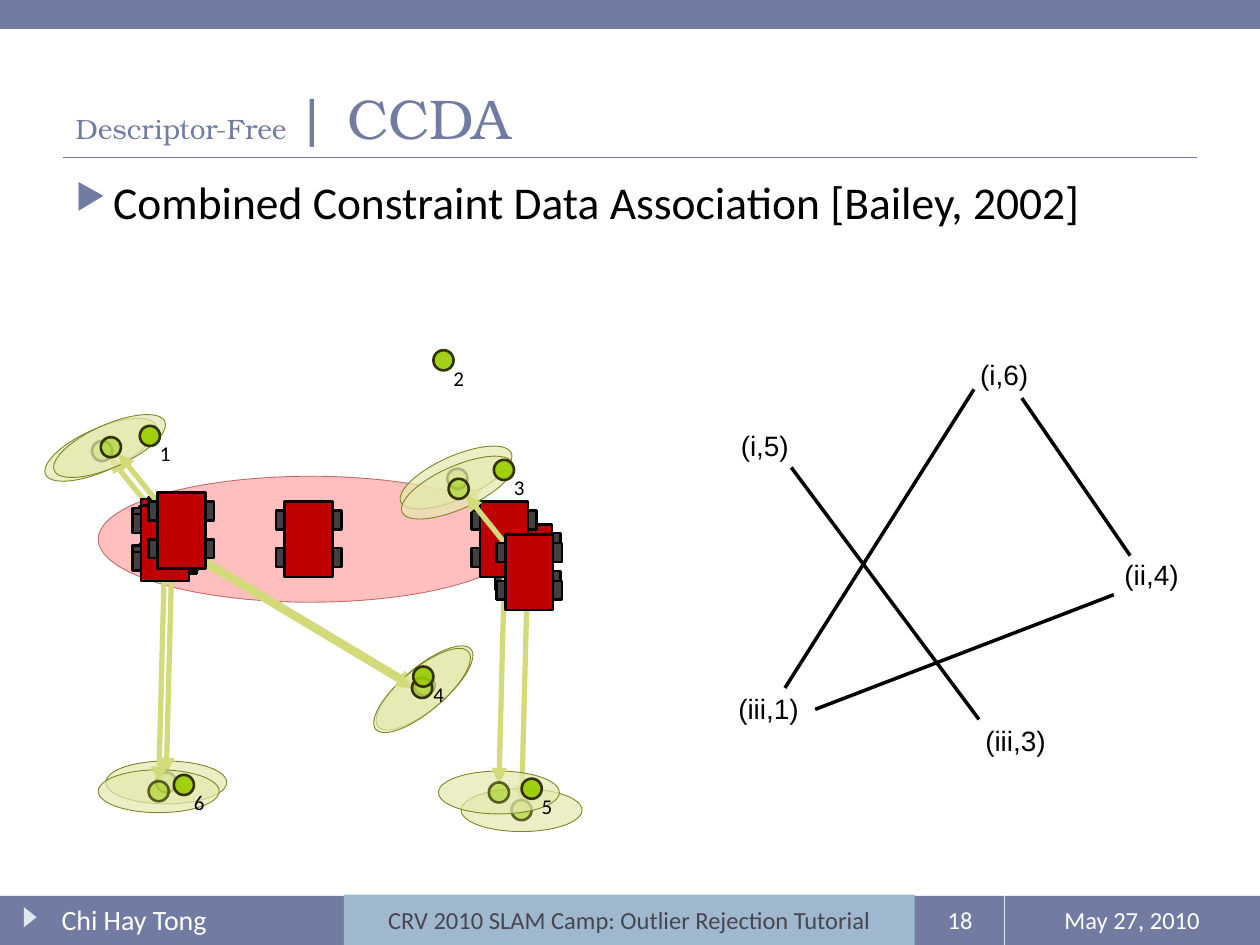
from dataclasses import dataclass
from lxml import etree
from pptx import Presentation
from pptx.dml.color import RGBColor
from pptx.enum.shapes import MSO_CONNECTOR as LINK, MSO_SHAPE as SHAPE
from pptx.enum.text import MSO_ANCHOR as ANCHOR, MSO_AUTO_SIZE as FIT, PP_ALIGN as ALIGN
from pptx.oxml.ns import qn
from pptx.util import Inches, Pt


@dataclass(frozen=True)
class Theme:
    slate: str = "727CA3"
    pale: str = "DDE9EC"
    sky: str = "9FB8CD"
    ink: str = "464653"
    white: str = "FFFFFF"
    black: str = "000000"
    red: str = "FF0000"
    maroon: str = "800000"
    chassis: str = "C00000"
    tyre: str = "404040"
    region: str = "E4E9AF"
    region_edge: str = "7D8525"
    ray: str = "D2DA7A"
    landmark: str = "99CC00"
    landmark_edge: str = "333300"
    heading: str = "TeX Gyre Bonum"
    body: str = "Calibri"
    node: str = "Arial"
    title_size: int = 32
    bullet_size: int = 26
    text_size: int = 16
    footer_size: int = 14
    label_size: int = 12


@dataclass(frozen=True)
class Sighting:
    tilt: float
    ray_start: tuple
    ray_end: tuple
    feature: tuple
    feature_turn: float = 0
    edge_alpha: int = 100


THEME = Theme()
LEVEL = Sighting(0, (0.53, -1.83), (0.48, 0.1), (0.4, 0.09), edge_alpha=75)
TILTED = Sighting(336, (1.05, 0.85), (0.55, 0.23), (0.41, 0.1), 82)
DIAGONAL = Sighting(320.1, (-1.54, -1.01), (0.4, 0.15), (0.4, 0.07))
WHEELS = ((0, 0), (0, 0.3), (0.45, 0.3), (0.45, 0))
DOT = 0.16


def apply(target, formats):
    for key, value in formats.items():
        setattr(target, key, value)


def shift(origin, offset):
    return origin[0] + offset[0], origin[1] + offset[1]


def paint(color_format, color):
    color_format.rgb = RGBColor.from_string(color)


def set_alpha(shape, route, percent):
    if percent < 100:
        color = shape._element.spPr.find("/".join(qn(tag) for tag in route))
        etree.SubElement(color, qn("a:alpha"), val=str(percent * 1000))


def add_block(shapes, kind, box, fill, edge=None, width=1.5, alpha=100, edge_alpha=100, turn=0):
    block = shapes.add_shape(kind, *map(Inches, box))
    block.shadow.inherit = False
    block.rotation = turn
    block.fill.solid()
    paint(block.fill.fore_color, fill)
    set_alpha(block, ("a:solidFill", "a:srgbClr"), alpha)
    if edge:
        block.line.width = Pt(width)
        paint(block.line.color, edge)
        set_alpha(block, ("a:ln", "a:solidFill", "a:srgbClr"), edge_alpha)
    else:
        block.line.fill.background()
    return block


def add_line(shapes, start, end, color, width, arrow=False):
    line = shapes.add_connector(LINK.STRAIGHT, *map(Inches, (*start, *end)))
    line.line.width = Pt(width)
    paint(line.line.color, color)
    properties = line._element.spPr
    if arrow:
        etree.SubElement(properties.find(qn("a:ln")), qn("a:tailEnd"), type="triangle")
    etree.SubElement(properties, qn("a:effectLst"))


def add_run(paragraph, words, size, color, font=THEME.body):
    run = paragraph.add_run()
    run.text = words
    apply(run.font, {"size": Pt(size), "name": font, "bold": False})
    paint(run.font.color, color)


def write(holder, words, size, color, font=THEME.body, align=ALIGN.LEFT, **frame_formats):
    frame = holder.text_frame
    apply(frame, {"word_wrap": True, "vertical_anchor": ANCHOR.TOP, **frame_formats})
    paragraph = frame.paragraphs[0]
    paragraph.alignment = align
    add_run(paragraph, words, size, color, font)


def add_text(shapes, box, words, size, color, **formats):
    write(shapes.add_textbox(*map(Inches, box)), words, size, color, **formats)


def add_sighting(shapes, origin, sighting):
    add_block(shapes, SHAPE.OVAL, (*origin, 0.96, 0.34), THEME.region, THEME.region_edge,
              width=0.5, alpha=70, turn=sighting.tilt)
    add_line(shapes, shift(origin, sighting.ray_start), shift(origin, sighting.ray_end),
             THEME.ray, 3, arrow=True)
    add_block(shapes, SHAPE.OVAL, (*shift(origin, sighting.feature), DOT, DOT),
              THEME.landmark, THEME.landmark_edge, alpha=50,
              edge_alpha=sighting.edge_alpha, turn=sighting.feature_turn)


def add_robot(shapes, origin, wheels=WHEELS):
    add_block(shapes, SHAPE.RECTANGLE, (*origin, 0.6, 0.38), THEME.chassis, THEME.black, turn=270)
    for wheel in wheels:
        add_block(shapes, SHAPE.RECTANGLE, (*shift(origin, wheel), 0.15, 0.07),
                  THEME.tyre, THEME.black, turn=270)


def add_landmark(shapes, origin, number):
    add_block(shapes, SHAPE.OVAL, (*origin, DOT, DOT), THEME.landmark,
              THEME.landmark_edge, alpha=90)
    add_text(shapes, (*shift(origin, (0.06, 0.07)), 0.29, 0.3), number, THEME.label_size,
             THEME.black, word_wrap=False, auto_size=FIT.SHAPE_TO_FIT_TEXT)


def add_frame(shapes):
    add_block(shapes, SHAPE.RECTANGLE, (0, 7.11, 10, 0.39), THEME.slate)
    add_line(shapes, (0.5, 1.25), (9.5, 1.25), THEME.slate, 0.75)
    add_block(shapes, SHAPE.ISOSCELES_TRIANGLE, (0.16, 7.23, 0.16, 0.1), THEME.pale, turn=90)
    add_block(shapes, SHAPE.RECTANGLE, (0, 0, 10, 0.23), THEME.slate)
    add_line(shapes, (7.97, 7.11), (7.97, 7.5), THEME.pale, 0.75)
    for left, width, words, size, align in (
        (7.27, 0.7, "18", THEME.footer_size, ALIGN.CENTER),
        (7.97, 2.03, "May 27, 2010", THEME.footer_size, ALIGN.CENTER),
        (0.39, 2.17, "Chi Hay Tong", THEME.text_size, ALIGN.LEFT),
    ):
        add_text(shapes, (left, 7.1, width, 0.4), words, size, THEME.white,
                 align=align, vertical_anchor=ANCHOR.MIDDLE)
    event = add_block(shapes, SHAPE.RECTANGLE, (2.73, 7.1, 4.53, 0.4), THEME.sky)
    write(event, "CRV 2010 SLAM Camp: Outlier Rejection Tutorial", THEME.footer_size,
          THEME.ink, align=ALIGN.CENTER, vertical_anchor=ANCHOR.MIDDLE)


def add_heading(shapes):
    title = shapes.title
    apply(title, {"left": Inches(0.5), "top": Inches(0.17),
                  "width": Inches(9), "height": Inches(1.08)})
    write(title, "Descriptor-Free ", THEME.text_size, THEME.slate, THEME.heading,
          vertical_anchor=ANCHOR.BOTTOM, auto_size=FIT.NONE)
    add_run(title.text_frame.paragraphs[0], "| CCDA", THEME.title_size, THEME.slate, THEME.heading)


def add_bullet(shapes, words):
    holder = shapes.add_textbox(*map(Inches, (0.5, 1.33, 9, 5.4)))
    properties = holder.text_frame.paragraphs[0]._p.get_or_add_pPr()
    properties.set("marL", str(Inches(0.3)))
    properties.set("indent", str(-Inches(0.3)))
    bullet_color = etree.SubElement(properties, qn("a:buClr"))
    etree.SubElement(bullet_color, qn("a:srgbClr"), val=THEME.slate)
    etree.SubElement(properties, qn("a:buSzPct"), val="76000")
    etree.SubElement(properties, qn("a:buChar"), char="▶")
    write(holder, words, THEME.bullet_size, THEME.black)


def add_scene(shapes):
    add_block(shapes, SHAPE.OVAL, (0.78, 3.78, 3.37, 1), THEME.red, THEME.maroon,
              width=0.5, alpha=25, edge_alpha=50)
    for parts in (
        [(add_sighting, (2.89, 5.29), DIAGONAL)],
        [(add_sighting, (0.84, 6.04), LEVEL)],
        [(add_sighting, (0.32, 3.4), TILTED)],
        [(add_robot, (1.07, 4.06))],
        [(add_sighting, (3.66, 6.26), LEVEL), (add_sighting, (3.14, 3.62), TILTED),
         (add_robot, (3.89, 4.27))],
        [(add_landmark, (3.44, 2.78), "2")],
        [(add_sighting, (0.78, 6.11), LEVEL), (add_robot, (1.01, 4.07), WHEELS[:2])],
        [(add_landmark, (1.38, 6.15), "6")],
        [(add_sighting, (2.87, 5.31), DIAGONAL), (add_robot, (1.01, 4.12), WHEELS[:3])],
        [(add_sighting, (3.48, 6.12), LEVEL),
         (add_robot, (3.7, 4.09), WHEELS[:2] + WHEELS[3:])],
        [(add_landmark, (4.14, 6.18), "5")],
        [(add_sighting, (0.39, 3.37), TILTED), (add_robot, (1.14, 4.02))],
        [(add_landmark, (1.11, 3.38), "1")],
        [(add_sighting, (3.15, 3.7), TILTED), (add_robot, (3.9, 4.35))],
        [(add_landmark, (3.92, 3.65), "3")],
        [(add_landmark, (3.28, 5.29), "4")],
        [(add_robot, (2.15, 4.09))],
    ):
        group = shapes.add_group_shape()
        for draw, origin, *details in parts:
            draw(group.shapes, origin, *details)


def add_graph(shapes):
    for left, top, width, pairing in (
        (5.68, 3.35, 0.78, "(i,5)"), (7.6, 2.79, 0.74, "(i,6)"), (8.77, 4.38, 0.74, "(ii,4)"),
        (5.73, 5.44, 0.74, "(iii,1)"), (7.69, 5.69, 0.74, "(iii,3)"),
    ):
        add_text(shapes, (left, top, width, 0.37), pairing, THEME.text_size, THEME.black,
                 font=THEME.node, align=ALIGN.CENTER, auto_size=FIT.SHAPE_TO_FIT_TEXT)
    for start, end in (
        ((6.28, 3.71), (7.77, 5.71)), ((8.11, 3.16), (8.97, 4.41)),
        ((7.73, 3.09), (6.23, 5.46)), ((6.47, 5.63), (8.84, 4.72)),
    ):
        add_line(shapes, start, end, THEME.black, 2)


def main():
    deck = Presentation()
    apply(deck, {"slide_width": Inches(10), "slide_height": Inches(7.5)})
    shapes = deck.slides.add_slide(deck.slide_layouts[5]).shapes
    add_frame(shapes)
    add_heading(shapes)
    add_bullet(shapes, "Combined Constraint Data Association [Bailey, 2002]")
    add_scene(shapes)
    add_graph(shapes)
    deck.save("out.pptx")


if __name__ == "__main__":
    main()
